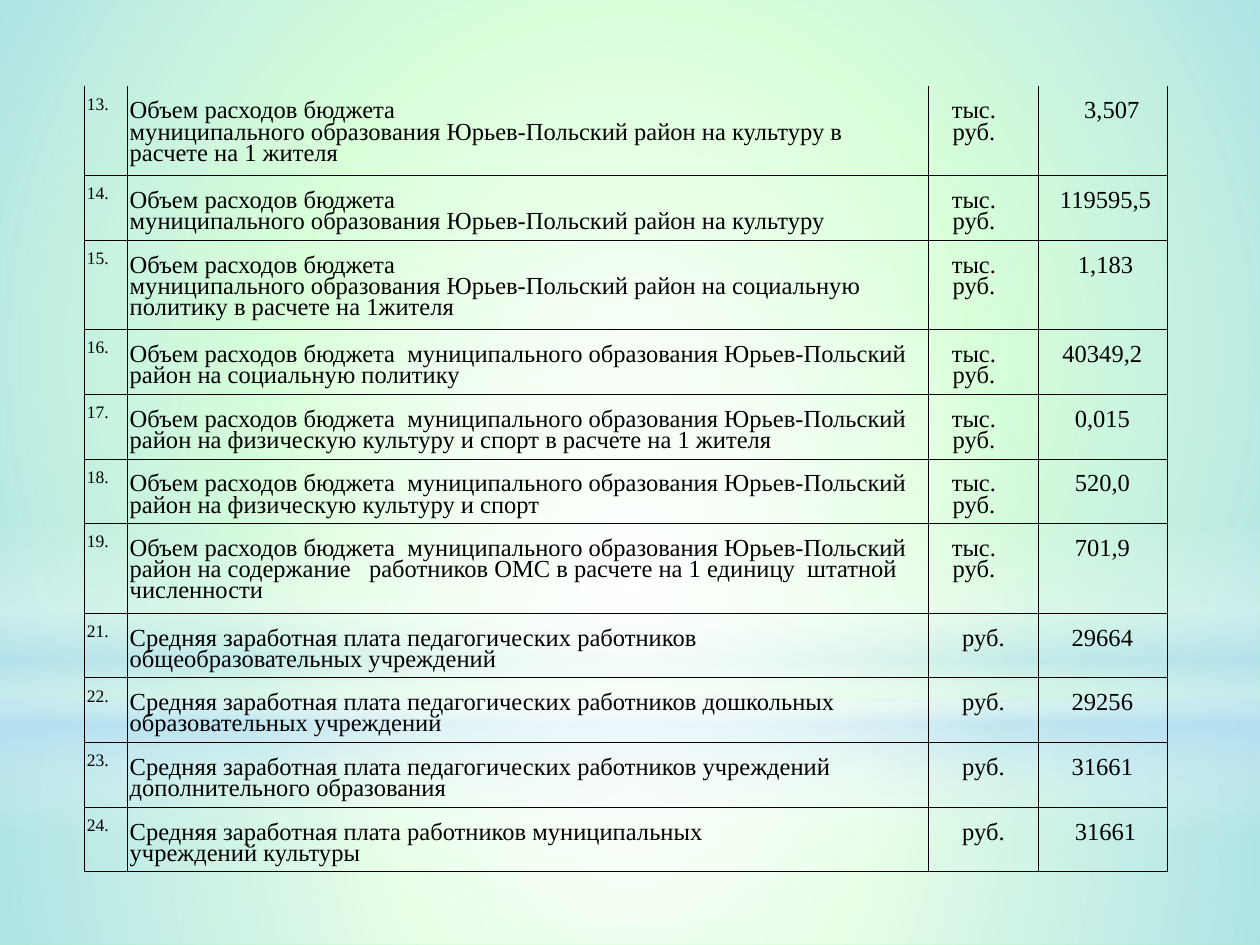
from dataclasses import dataclass

from lxml import etree
from pptx import Presentation
from pptx import util as u
from pptx.dml.color import RGBColor
from pptx.enum import shapes, text
from pptx.oxml import ns

Inches = u.Inches


@dataclass(frozen=True)
class Theme:
    font: str = "Times New Roman"
    number_size: int = 10
    body_size: int = 14
    ink: str = "000000"
    ground: str = "99FF99"
    white: str = "FFFFFF"
    sky: str = "B4DCFA"
    line_spacing: float = 0.78
    rule_width: float = 0.06


theme = Theme()
LEFT, CENTER = text.PP_ALIGN.LEFT, text.PP_ALIGN.CENTER
A = ns.nsdecls("a")


def add_glow(kind, top, height, stops, direction):
    """Add a full-width borderless shape; stops are (position %, colour, opacity %)."""
    glow = slide.shapes.add_shape(kind, 0, Inches(top), Inches(10), Inches(height))
    glow.shadow.inherit = False
    glow.line.fill.background()
    stop_xml = "".join(
        f'<a:gs pos="{pos * 1000}"><a:srgbClr val="{colour}">'
        f'<a:alpha val="{opacity * 1000}"/></a:srgbClr></a:gs>'
        for pos, colour, opacity in stops)
    gradient = etree.fromstring(
        f'<a:gradFill {A} rotWithShape="1"><a:gsLst>{stop_xml}</a:gsLst>{direction}</a:gradFill>')
    glow.element.spPr.find(ns.qn("a:prstGeom")).addnext(gradient)


def write(cell, lines, size=theme.body_size, align=LEFT, top=0.13, left=0.02, right=0.02):
    cell.margin_left, cell.margin_right = Inches(left), Inches(right)
    cell.margin_top, cell.margin_bottom = Inches(top), 0
    cell.text_frame.text = lines
    for paragraph in cell.text_frame.paragraphs:
        paragraph.alignment = align
        paragraph.line_spacing = theme.line_spacing
        paragraph.font.name = theme.font
        paragraph.font.size = u.Pt(size)
        paragraph.font.color.rgb = RGBColor.from_string(theme.ink)


prs = Presentation()
prs.slide_width, prs.slide_height = Inches(10), Inches(7.5)
slide = prs.slides.add_slide(prs.slide_layouts[6])

# Background: soft light over a green ground
slide.background.fill.solid()
slide.background.fill.fore_color.rgb = RGBColor.from_string(theme.ground)
radial = '<a:path path="circle"><a:fillToRect l="50000" t="50000" r="50000" b="50000"/></a:path>'
downward = '<a:lin ang="5400000" scaled="0"/>'
white, sky = theme.white, theme.sky
rectangle, oval = shapes.MSO_SHAPE.RECTANGLE, shapes.MSO_SHAPE.OVAL
add_glow(rectangle, 5.58, 1.92, [(0, white, 91), (37, white, 76), (100, sky, 79)], radial)
add_glow(rectangle, 0, 5.58, [(0, white, 89), (48, white, 62), (100, sky, 79)], radial)
add_glow(rectangle, 4.12, 2.5, [(0, white, 0), (29, white, 30), (45, sky, 40),
                                (55, white, 26), (65, sky, 60), (100, white, 0)], downward)
add_glow(oval, 1.75, 5.58, [(0, white, 100), (56, white, 0)], radial)

# Indicators: number, description, unit, value, extra left inset of the value
THOUSANDS, ROUBLES = "тыс.\nруб.", "руб."
indicators = [
    ("13.", "Объем расходов бюджета\nмуниципального образования Юрьев-Польский район на культуру в\n"
     "расчете на 1 жителя", THOUSANDS, "3,507", 0.15),
    ("14.", "Объем расходов бюджета\nмуниципального образования Юрьев-Польский район на культуру",
     THOUSANDS, "119595,5", 0.05),
    ("15.", "Объем расходов бюджета\nмуниципального образования Юрьев-Польский район на социальную "
     "политику в расчете на 1жителя", THOUSANDS, "1,183", 0.05),
    ("16.", "Объем расходов бюджета  муниципального образования Юрьев-Польский район на "
     "социальную политику", THOUSANDS, "40349,2", 0),
    ("17.", "Объем расходов бюджета  муниципального образования Юрьев-Польский район на "
     "физическую культуру и спорт в расчете на 1 жителя", THOUSANDS, "0,015", 0),
    ("18.", "Объем расходов бюджета  муниципального образования Юрьев-Польский район на "
     "физическую культуру и спорт", THOUSANDS, "520,0", 0),
    ("19.", "Объем расходов бюджета  муниципального образования Юрьев-Польский район на "
     "содержание   работников ОМС в расчете на 1 единицу  штатной численности",
     THOUSANDS, "701,9", 0),
    ("21.", "Средняя заработная плата педагогических работников общеобразовательных учреждений",
     ROUBLES, "29664", 0),
    ("22.", "Средняя заработная плата педагогических работников дошкольных "
     "образовательных учреждений", ROUBLES, "29256", 0),
    ("23.", "Средняя заработная плата педагогических работников учреждений "
     "дополнительного образования", ROUBLES, "31661", 0),
    ("24.", "Средняя заработная плата работников муниципальных\nучреждений культуры",
     ROUBLES, "31661", 0.05),
]
three_line_numbers = {"13.", "15.", "19."}
table_height, tall_row = 6.24, 0.71
short_row = (table_height - 3 * tall_row) / (len(indicators) - 3)

table = slide.shapes.add_table(len(indicators), 4, Inches(0.67), Inches(0.68),
                               Inches(8.59), Inches(table_height)).table
table.first_row = table.horz_banding = False
for column, width in zip(table.columns, (0.34, 6.36, 0.87, 1.02)):
    column.width = Inches(width)

for row_index, (number, description, unit, value, value_inset) in enumerate(indicators):
    row = table.rows[row_index]
    row.height = Inches(tall_row if number in three_line_numbers else short_row)
    number_cell, description_cell, unit_cell, value_cell = row.cells
    write(number_cell, number, size=theme.number_size, top=0.1)
    write(description_cell, description)
    write(unit_cell, unit, align=CENTER, right=0.17 if unit == THOUSANDS else 0.02)
    write(value_cell, value, align=CENTER, left=0.02 + value_inset)

    for cell in row.cells:
        cell.fill.background()
        properties = cell._tc.get_or_add_tcPr()
        for position, side in enumerate(("lnL", "lnR", "lnT", "lnB")):
            open_top = side == "lnT" and row_index == 0
            paint = "<a:noFill/>" if open_top else (
                f'<a:solidFill><a:srgbClr val="{theme.ink}"/></a:solidFill>')
            properties.insert(position, etree.fromstring(
                f'<a:{side} {A} w="{u.Pt(theme.rule_width)}">{paint}</a:{side}>'))

prs.save("out.pptx")
